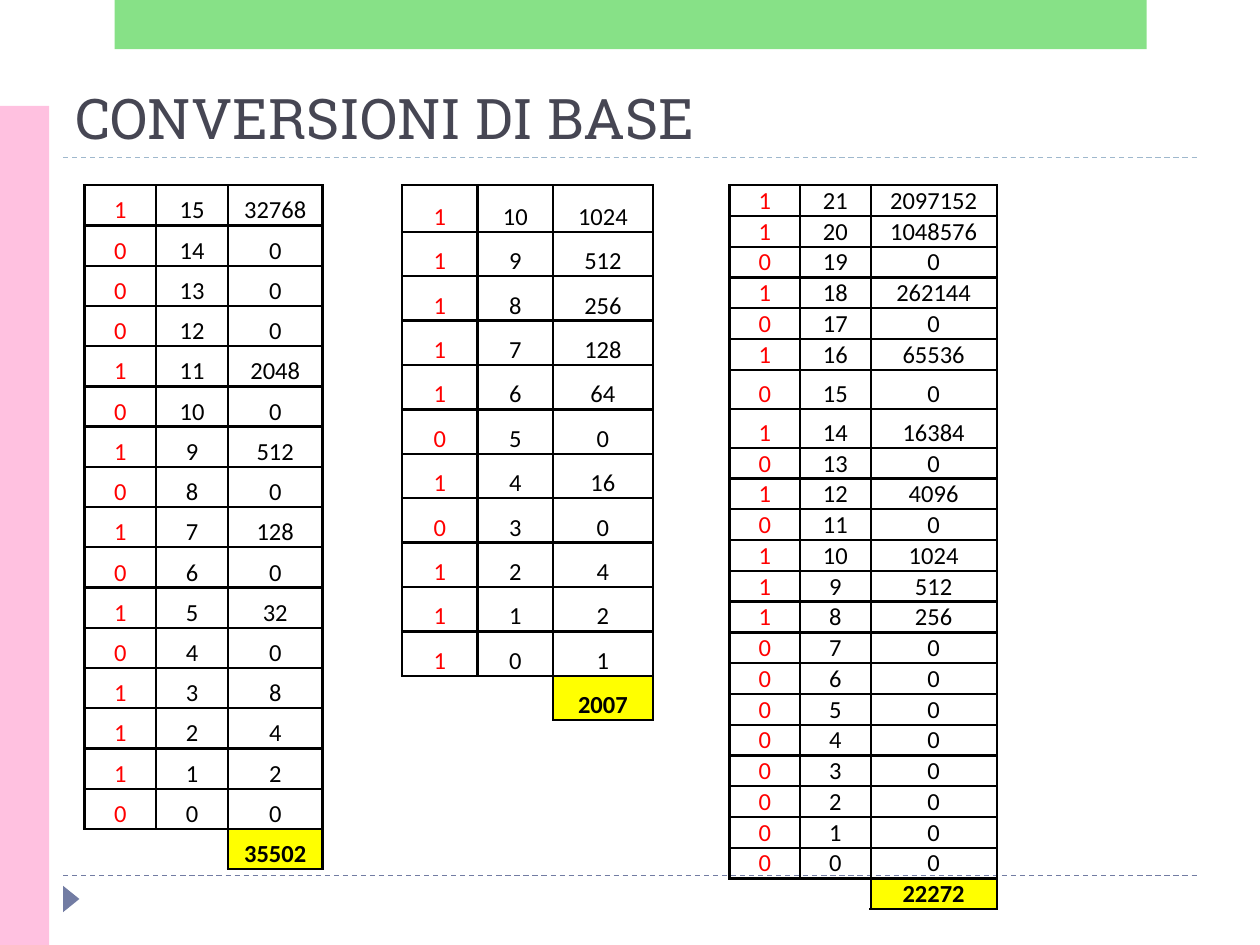
"""Build the slide on base conversions with three binary expansion tables."""
from dataclasses import dataclass

from lxml import etree
from pptx import Presentation
from pptx import util as u
from pptx.dml.color import RGBColor
from pptx.enum import dml, shapes, text
from pptx.oxml.ns import qn


@dataclass(frozen=True)
class Theme:
    title_font: str = "Roboto Slab"
    table_font: str = "Calibri"
    title_size: int = 32
    table_size: int = 14
    border_width: float = 1.5
    rule_width: float = 0.75
    background: str = "FFFFFF"
    title: str = "464653"
    ink: str = "000000"
    bit: str = "FF0000"
    total: str = "FFFF00"
    pink: str = "FFC1E0"
    green: str = "62D862"
    footer: str = "727CA3"
    header: str = "9FB8CD"


theme = Theme()


def add_text(paragraph, words, font, size, color, bold=False):
    run = paragraph.add_run()
    run.text = words
    run.font.name = font
    run.font.size = u.Pt(size)
    run.font.bold = bold
    run.font.color.rgb = RGBColor.from_string(color)


def set_borders(cell, sides):
    properties = cell._tc.get_or_add_tcPr()
    for position, side in enumerate("LRTB"):
        line = etree.Element(qn(f"a:ln{side}"), w=str(u.Pt(theme.border_width)))
        if side in sides:
            fill = etree.SubElement(line, qn("a:solidFill"))
            etree.SubElement(fill, qn("a:srgbClr"), val=theme.ink)
        else:
            etree.SubElement(line, qn("a:noFill"))
        properties.insert(position, line)


presentation = Presentation()
presentation.slide_width = u.Inches(10)
presentation.slide_height = u.Inches(7.5)
slide = presentation.slides.add_slide(presentation.slide_layouts[5])
slide.background.fill.solid()
slide.background.fill.fore_color.rgb = RGBColor.from_string(theme.background)

for y, color in ((6.95, theme.footer), (1.25, theme.header)):
    rule = slide.shapes.add_connector(
        shapes.MSO_CONNECTOR.STRAIGHT, u.Inches(0.5), u.Inches(y), u.Inches(9.5), u.Inches(y))
    rule.line.color.rgb = RGBColor.from_string(color)
    rule.line.width = u.Pt(theme.rule_width)
    rule.line.dash_style = dml.MSO_LINE.DASH
    etree.SubElement(rule._element.spPr, qn("a:effectLst"))

decorations = (
    (shapes.MSO_SHAPE.ISOSCELES_TRIANGLE, (0.46, 7.07, 0.21, 0.13), 90, theme.footer, 100),
    (shapes.MSO_SHAPE.RECTANGLE, (0, 0.84, 0.39, 6.66), 0, theme.pink, 100),
    (shapes.MSO_SHAPE.RECTANGLE, (0.91, 0, 8.19, 0.39), 0, theme.green, 76),
)
for preset, box, rotation, color, opacity in decorations:
    shape = slide.shapes.add_shape(preset, *map(u.Inches, box))
    shape.rotation = rotation
    shape.shadow.inherit = False
    shape.fill.solid()
    shape.fill.fore_color.rgb = RGBColor.from_string(color)
    shape.line.fill.background()
    if opacity < 100:
        fill_color = shape._element.spPr.find(f".//{qn('a:srgbClr')}")
        etree.SubElement(fill_color, qn("a:alpha"), val=str(opacity * 1000))

title = slide.shapes.title
title.left, title.top, title.width, title.height = map(u.Inches, (0.5, 0.55, 9, 0.7))
title.text_frame.word_wrap = True
title.text_frame.vertical_anchor = text.MSO_ANCHOR.BOTTOM
title_paragraph = title.text_frame.paragraphs[0]
title_paragraph.alignment = text.PP_ALIGN.LEFT
add_text(title_paragraph, "CONVERSIONI DI BASE", theme.title_font, theme.title_size, theme.title)

conversions = (
    ("1000101010101110", "35502", 0.67, 5.43, (0.57, 0.57, 0.75), {}, 0),
    ("11111010111", "2007", 3.19, 4.25, (0.6, 0.6, 0.79), {0: 0.37}, 0.01),
    ("1101010101011100000000", "22272", 5.79, 5.75, (0.56, 0.56, 1), {6: 0.31, 7: 0.31}, 0),
)
for bits, total, left, height, widths, tall_rows, inset in conversions:
    powers = range(len(bits) - 1, -1, -1)
    rows = [(bit, str(power), str(int(bit) * 2 ** power)) for bit, power in zip(bits, powers)]
    rows.append(("", "", total))
    row_height = (height - sum(tall_rows.values())) / (len(rows) - len(tall_rows))
    table = slide.shapes.add_table(
        len(rows), 3, u.Inches(left), u.Inches(1.47), u.Inches(sum(widths)), u.Inches(height)).table
    table.first_row = False
    table.horz_banding = False
    for column, width in zip(table.columns, widths):
        column.width = u.Inches(width)

    for row_index, values in enumerate(rows):
        table.rows[row_index].height = u.Inches(tall_rows.get(row_index, row_height))
        is_last = row_index == len(bits)
        for column_index, value in enumerate(values):
            cell = table.cell(row_index, column_index)
            cell.margin_left = cell.margin_right = cell.margin_top = u.Inches(inset)
            cell.margin_bottom = 0
            cell.vertical_anchor = text.MSO_ANCHOR.BOTTOM
            cell.fill.background()
            paragraph = cell.text_frame.paragraphs[0]
            paragraph.alignment = text.PP_ALIGN.CENTER
            if value:
                color = theme.bit if column_index == 0 else theme.ink
                add_text(paragraph, value, theme.table_font, theme.table_size, color, is_last)
                sides = "LRTB"
            else:
                etree.SubElement(paragraph._p, qn("a:endParaRPr"), sz=str(theme.table_size * 100))
                sides = ("T", "TR")[column_index]
            if is_last and value:
                cell.fill.solid()
                cell.fill.fore_color.rgb = RGBColor.from_string(theme.total)
            set_borders(cell, sides)

presentation.save("out.pptx")
